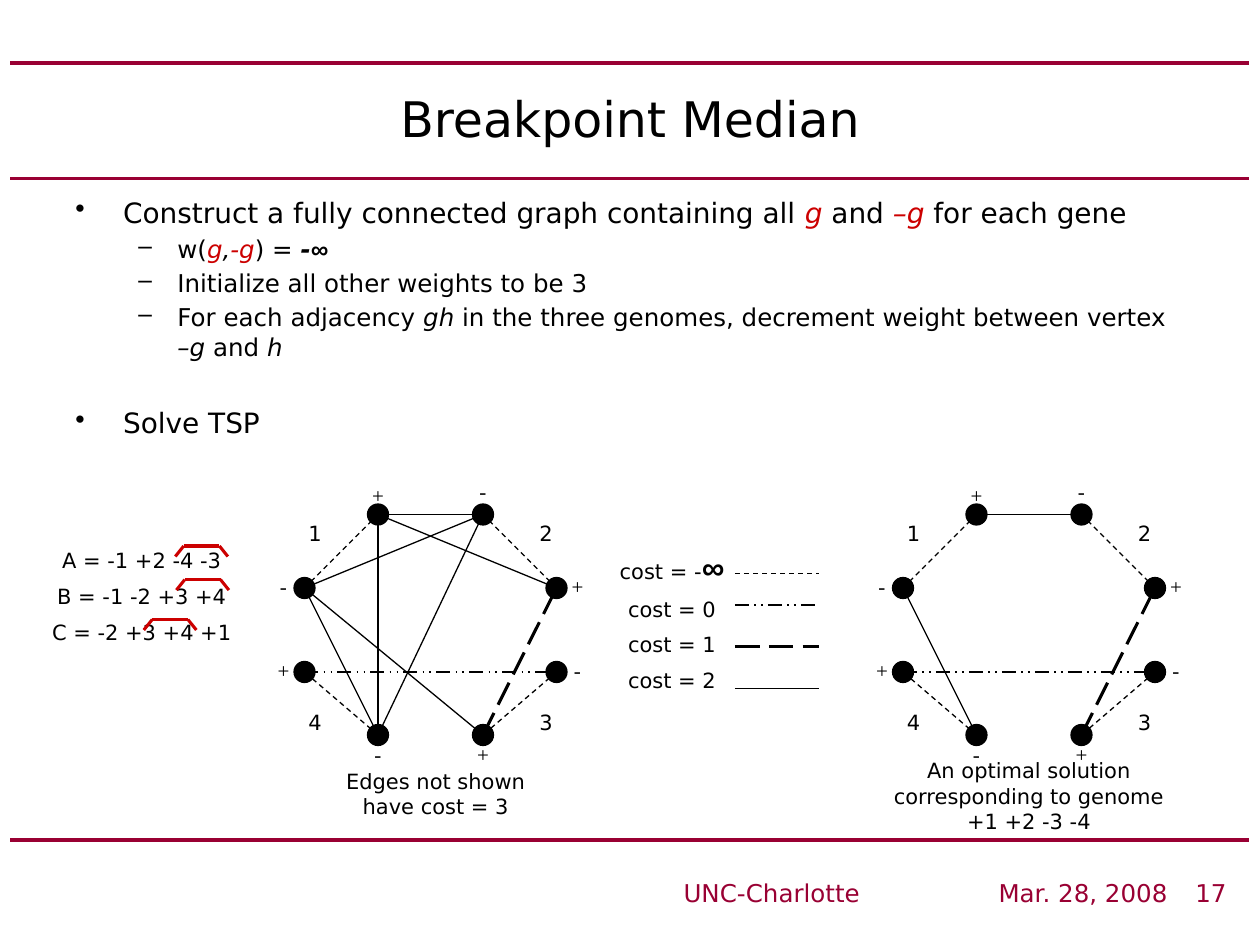
"""Build the Breakpoint Median slide on a grid of twelve cells to the inch."""
from lxml import etree
from pptx import Presentation, util as u
from pptx.dml.color import RGBColor
from pptx.enum import dml, shapes, text
from pptx.oxml import ns

THEME = {
    "black": "000000", "red": "CC0000", "maroon": "990033",
    "sans": "DejaVu Sans", "serif": "Times New Roman", "symbol": "Arial",
    "title": 28, "body": 16, "sub": 14, "small": 12, "infinity": 18,
}
CELL = 1 / 12
DASH = dml.MSO_LINE
ALIGN = text.PP_ALIGN

PLAIN = {}
ITALIC = {"italic": True}
RED = {"italic": True, "color": THEME["red"]}
STRONG = {"bold": True, "italic": True}
INFINITY = {**STRONG, "name": THEME["symbol"]}

TITLE = "Breakpoint Median"
FOOTER = "UNC-Charlotte\t\t\tMar. 28, 2008\t 17"
BULLETS = [
    (0, 0, [("Construct a fully connected graph containing all ", PLAIN), ("g ", RED),
            ("and ", PLAIN), ("–g", RED), (" for each gene", PLAIN)]),
    (1, 2.8, [("w(", PLAIN), ("g", RED), (",", ITALIC), ("-g", RED), (") = ", PLAIN),
              ("-", STRONG), ("∞", INFINITY)]),
    (1, 2.8, [("Initialize all other weights to be 3", PLAIN)]),
    (1, 2.8, [("For each adjacency ", PLAIN), ("gh", ITALIC),
              (" in the three genomes, decrement weight between vertex ", PLAIN),
              ("–g", ITALIC), (" and ", PLAIN), ("h", ITALIC)]),
    (0, 25.5, [("Solve TSP", PLAIN)]),
]
LEVELS = [("•", 0.38, 0.38, THEME["body"]), ("–", 0.81, 0.31, THEME["sub"])]
GENOMES = ["A = -1 +2 -4 -3", "B = -1 -2 +3 +4", "C = -2 +3 +4 +1"]
ADJACENCIES = [(16.7, 52), (16.8, 55.2), (13.7, 59)]
BRACKET = [((0.8, 0), (4.2, 0)), ((0.8, 0), (0, 1)), ((4.2, 0), (5, 1))]

COSTS = {
    "minus infinity": (0.75, DASH.DASH),
    "0": (1, DASH.DASH_DOT_DOT),
    "1": (1.75, DASH.LONG_DASH),
    "2": (0.75, None),
}
LEGEND = [
    [("cost = -", PLAIN), ("∞", {**INFINITY, "size": THEME["infinity"]})],
    [("cost = 0", PLAIN)], [("cost = 1", PLAIN)], [("cost = 2", PLAIN)],
]
LEGEND_ROWS = [54.6, 57.6, 61.6, 65.6]

VERTICES = {
    "1+": ((36, 49), (33, 45.4)), "2-": ((46, 49), (43, 45)),
    "1-": ((29, 56), (24, 54)), "4+": ((29, 64), (24, 62)),
    "4-": ((36, 70), (33, 70)), "3+": ((46, 70), (43, 70)),
    "2+": ((53, 56), (52, 54)), "3-": ((53, 64), (52, 62)),
}
GENES = {"1": (27, 49), "2": (49, 49), "4": (27, 67), "3": (49, 67)}
TOUR = [
    ("1-", "1+", "minus infinity"), ("2+", "2-", "minus infinity"),
    ("4-", "4+", "minus infinity"), ("3-", "3+", "minus infinity"),
    ("4+", "3-", "0"), ("3+", "2+", "1"), ("4-", "1-", "2"), ("1+", "2-", "2"),
]
OTHER_EDGES = [("4-", "1+", "2"), ("4-", "2-", "2"), ("3+", "1-", "2"),
               ("1-", "2-", "2"), ("1+", "2+", "2")]
GRAPHS = [(0, TOUR + OTHER_EDGES), (57, TOUR)]
CAPTIONS = [
    ("Edges not shown have cost = 3", (30, 72.6, 23, 6)),
    ("An optimal solution corresponding to genome +1 +2 -3 -4", (83, 71.6, 30, 8.4)),
]


def cells(*values):
    return [u.Inches(value * CELL) for value in values]


def add_line(parent, start, end, color=THEME["black"], width=0.75, dash=None):
    line = parent.add_connector(shapes.MSO_CONNECTOR.STRAIGHT, *cells(*start, *end))
    line.line.color.rgb = RGBColor.from_string(color)
    line.line.width = u.Pt(width)
    if dash is not None:
        line.line.dash_style = dash
    etree.SubElement(line._element.spPr, ns.qn("a:effectLst"))


def add_runs(paragraph, runs, size, color=THEME["black"], name=THEME["sans"]):
    for words, style in runs:
        run = paragraph.add_run()
        run.text = words
        look = {"size": size, "color": color, "name": name, **style}
        run.font.color.rgb = RGBColor.from_string(look.pop("color"))
        look["size"] = u.Pt(look["size"])
        for key, value in look.items():
            setattr(run.font, key, value)


def add_frame(parent, box, anchor=text.MSO_ANCHOR.TOP):
    frame = parent.add_textbox(*cells(*box)).text_frame
    frame.word_wrap = True
    frame.vertical_anchor = anchor
    return frame


def next_paragraph(frame, index):
    return frame.add_paragraph() if index else frame.paragraphs[0]


def add_text(parent, box, rows, size=THEME["small"], align=ALIGN.CENTER,
             anchor=text.MSO_ANCHOR.TOP, **look):
    frame = add_frame(parent, box, anchor)
    for index, row in enumerate(rows):
        paragraph = next_paragraph(frame, index)
        paragraph.alignment = align
        paragraph.space_before = u.Pt(size / 2 if index else 0)
        add_runs(paragraph, [(row, PLAIN)] if isinstance(row, str) else row, size, **look)


def add_bullets(parent, box):
    frame = add_frame(parent, box)
    for index, (level, gap, runs) in enumerate(BULLETS):
        mark, margin, hang, size = LEVELS[level]
        paragraph = next_paragraph(frame, index)
        paragraph.level = level
        paragraph.space_before = u.Pt(gap)
        properties = paragraph._p.get_or_add_pPr()
        properties.set("marL", str(u.Inches(margin)))
        properties.set("indent", str(-u.Inches(hang)))
        etree.SubElement(properties, ns.qn("a:buChar"), char=mark)
        add_runs(paragraph, runs, size)


def add_graph(parent, shift, edges):
    for vertex, ((x, y), (left, top)) in VERTICES.items():
        dot = parent.add_shape(shapes.MSO_SHAPE.OVAL, *cells(x + shift - 1, y - 1, 2, 2))
        dot.shadow.inherit = False
        dot.fill.solid()
        dot.fill.fore_color.rgb = RGBColor.from_string(THEME["black"])
        dot.line.color.rgb = RGBColor.from_string(THEME["black"])
        dot.line.width = u.Pt(0.75)
        add_text(parent, (left + shift, top, 6, 3.6), [vertex[-1]], name=THEME["serif"])
    for gene, (left, top) in GENES.items():
        add_text(parent, (left + shift, top, 6, 3.6), [gene])
    for start, end, cost in edges:
        (x1, y1), (x2, y2) = VERTICES[start][0], VERTICES[end][0]
        width, dash = COSTS[cost]
        add_line(parent, (x1 + shift, y1), (x2 + shift, y2), width=width, dash=dash)


def main():
    deck = Presentation()
    deck.slide_width, deck.slide_height = u.Inches(10), u.Inches(7.5)
    canvas = deck.slides.add_slide(deck.slide_layouts[6]).shapes
    for row in (80, 17, 6):
        add_line(canvas, (1, row), (119, row), THEME["maroon"], 2.25)
    add_text(canvas, (34, 83, 84, 4), [FOOTER], THEME["sub"], ALIGN.RIGHT,
             color=THEME["maroon"])
    add_text(canvas, (6, 6, 108, 10.4), [TITLE], THEME["title"],
             anchor=text.MSO_ANCHOR.MIDDLE)
    add_bullets(canvas, (6, 18, 108, 61))
    add_text(canvas, (3, 51.6, 21, 10.8), GENOMES)
    for shift, edges in GRAPHS:
        add_graph(canvas, shift, edges)
    for caption, box in CAPTIONS:
        add_text(canvas, box, [caption])
    add_text(canvas, (56, 51.6, 16, 15.6), LEGEND)
    for row, (width, dash) in zip(LEGEND_ROWS, COSTS.values()):
        add_line(canvas, (70, row), (78, row), width=width, dash=dash)
    for left, top in ADJACENCIES:
        bracket = canvas.add_group_shape().shapes
        for (x1, y1), (x2, y2) in BRACKET:
            add_line(bracket, (left + x1, top + y1), (left + x2, top + y2),
                     THEME["red"], 1.75)
    deck.save("out.pptx")


if __name__ == "__main__":
    main()
